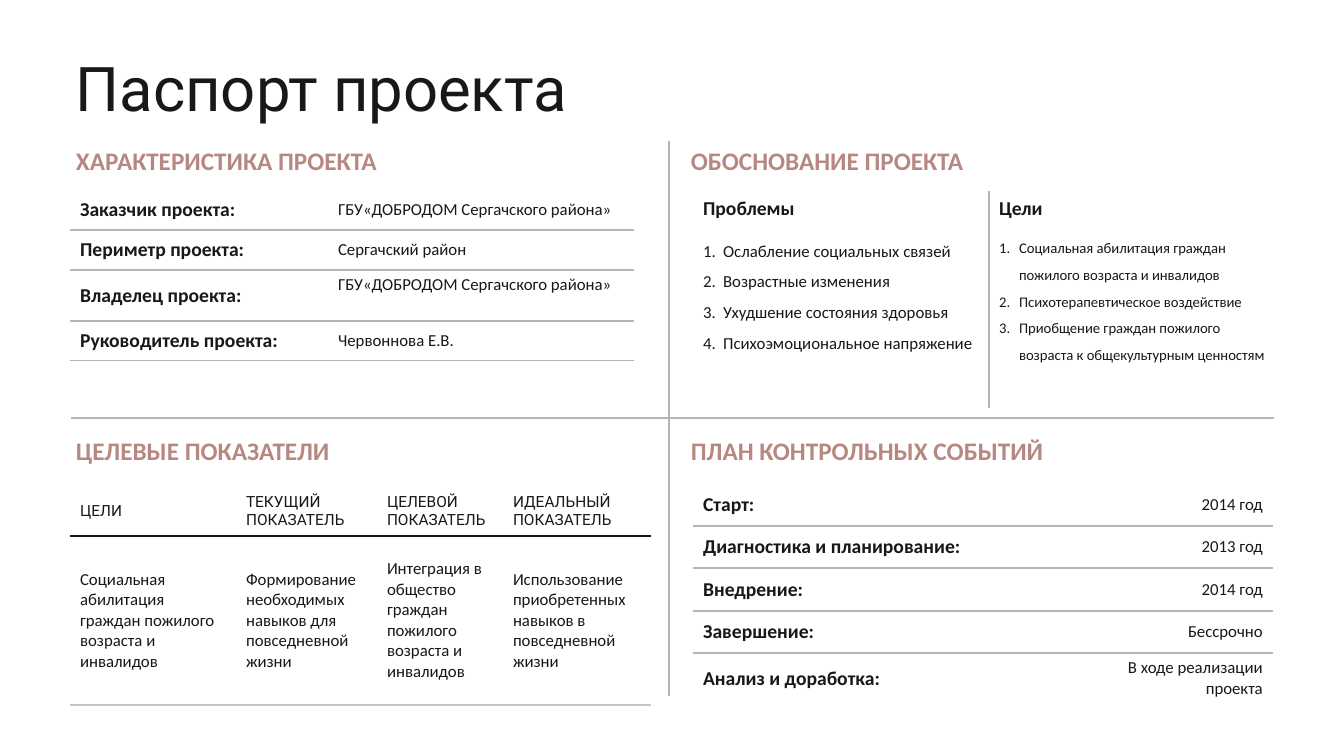
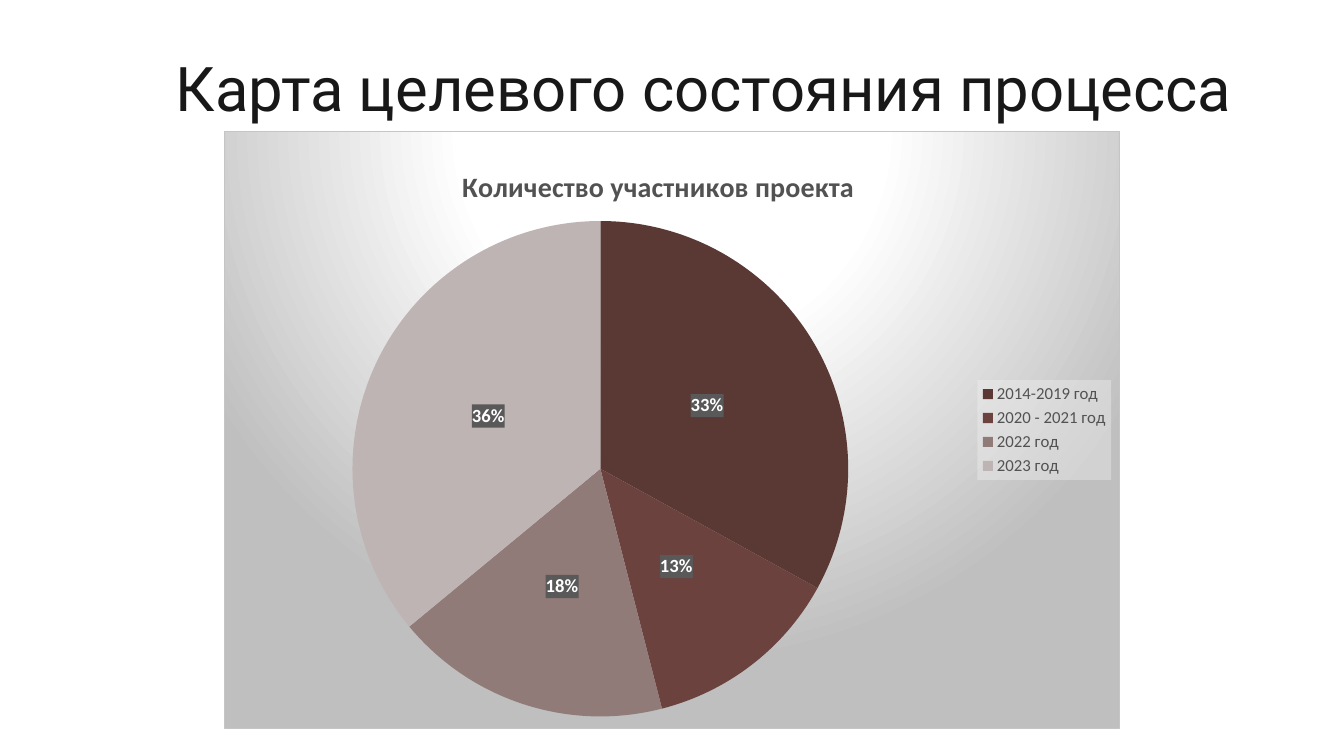
import pptx
import pptx.chart.data
import pptx.dml.color
import pptx.enum.chart
import pptx.enum.shapes
import pptx.enum.text
import pptx.oxml
import pptx.oxml.ns
import pptx.util
from lxml import etree

SCALE = 914400 / 100.8
COLOURS = {
    "ink": "181818", "accent": "B78781", "rule": "B5B5B5", "edge": "C5C5C5",
    "chart_text": "525252", "white": "FFFFFF", "shade": "BFBFBF",
    "label": "595959", "legend": "F2F2F2",
}
STYLES = {
    "title": (44, False, "Roboto", "ink"),
    "heading": (18, True, "Calibri", "accent"),
    "label": (14, True, "Calibri", "ink"),
    "value": (12, False, "Calibri", "ink"),
    "goal": (10.5, False, "Calibri", "ink"),
    "column": (11, False, "Roboto", "ink"),
}
ALIGN = pptx.enum.text.PP_ALIGN
ANCHOR = pptx.enum.text.MSO_ANCHOR
NO_STYLE = "{2D5ABB26-0587-4C30-8999-92F81FD0307C}"
NS = pptx.oxml.ns.nsdecls("a", "c")

PASSPORT_TITLE = "Паспорт проекта"
HEADINGS = [
    ["ХАРАКТЕРИСТИКА ПРОЕКТА", "ОБОСНОВАНИЕ ПРОЕКТА"],
    ["ЦЕЛЕВЫЕ ПОКАЗАТЕЛИ", "ПЛАН КОНТРОЛЬНЫХ СОБЫТИЙ"],
]
HEADING_COLUMNS = [(66, 603), (681, 592)]
HEADING_TOPS = [140, 430]
DIVIDERS = [(669, 141, 669, 696), (71, 418, 1274, 418)]

PROFILE = [
    (40, ["Заказчик проекта:", "ГБУ«ДОБРОДОМ Сергачского района»"]),
    (40, ["Периметр проекта:", "Сергачский район"]),
    (51, ["Владелец проекта:", "ГБУ«ДОБРОДОМ Сергачского района»"]),
    (40, ["Руководитель проекта:", "Червоннова Е.В."]),
]
RATIONALE = [
    (35, ["Проблемы", "Цели"]),
    (182, [
        ["Ослабление социальных связей", "Возрастные изменения",
         "Ухудшение состояния здоровья", "Психоэмоциональное напряжение"],
        ["Социальная абилитация граждан пожилого возраста и инвалидов",
         "Психотерапевтическое воздействие",
         "Приобщение граждан пожилого возраста к общекультурным ценностям"],
    ]),
]
INDICATORS = [
    (49, ["ЦЕЛИ", "ТЕКУЩИЙ ПОКАЗАТЕЛЬ", "ЦЕЛЕВОЙ ПОКАЗАТЕЛЬ", "ИДЕАЛЬНЫЙ ПОКАЗАТЕЛЬ"]),
    (169, ["Социальная абилитация граждан пожилого возраста и инвалидов",
           "Формирование необходимых навыков для повседневной жизни",
           "Интеграция в общество граждан пожилого возраста и инвалидов",
           "Использование приобретенных навыков в повседневной жизни"]),
]
MILESTONES = [
    (43, ["Старт:", "2014 год"]),
    (42, ["Диагностика и планирование:", "2013 год"]),
    (43, ["Внедрение:", "2014 год"]),
    (42, ["Завершение:", "Бессрочно"]),
    (51, ["Анализ и доработка:", "В ходе реализации проекта"]),
]

MAP_TITLE = "Карта целевого состояния процесса"
CHART_TITLE = "Количество участников проекта"
CHART_BOX = (224, 131, 896, 598)
PARTICIPANTS = [
    ("2014-2019 год", 33, "5A3833"),
    ("2020 - 2021 год", 13, "6B423D"),
    ("2022 год", 18, "917B78"),
    ("2023 год", 36, "BEB4B3"),
]


def px(length):
    return pptx.util.Emu(round(length * SCALE))


def rgb(value):
    return pptx.dml.color.RGBColor.from_string(COLOURS.get(value, value))


def style_font(font, size, bold, face, colour):
    font.size = pptx.util.Pt(size)
    font.bold = bold
    font.name = face
    font.color.rgb = rgb(colour)


def write(paragraph, text, style, align=ALIGN.LEFT):
    run = paragraph.add_run()
    run.text = text
    style_font(run.font, *STYLES[style])
    paragraph.alignment = align


def add_text(slide, box, text, style, align=ALIGN.LEFT):
    frame = slide.shapes.add_textbox(*map(px, box)).text_frame
    frame.word_wrap = True
    write(frame.paragraphs[0], text, style, align)
    return frame


def add_title(slide, text, align=ALIGN.LEFT):
    frame = add_text(slide, (66, 52, 1277, 80), text, "title", align)
    frame.vertical_anchor = ANCHOR.MIDDLE
    frame.paragraphs[0].line_spacing = 0.9


def add_divider(slide, ends):
    line = slide.shapes.add_connector(
        pptx.enum.shapes.MSO_CONNECTOR.STRAIGHT, *map(px, ends))
    line.line.color.rgb = rgb("rule")
    line.line.width = pptx.util.Pt(1)
    etree.SubElement(line._element.spPr, pptx.oxml.ns.qn("a:effectLst"))


def add_border(cell, side, colour, points):
    cell._tc.get_or_add_tcPr().append(pptx.oxml.parse_xml(
        f'<a:ln{side} {NS} w="{pptx.util.Pt(points)}"><a:solidFill>'
        f'<a:srgbClr val="{COLOURS[colour]}"/></a:solidFill></a:ln{side}>'))


def number_paragraph(paragraph):
    paragraph.line_spacing = 1.5
    properties = paragraph._p.get_or_add_pPr()
    properties.set("marL", str(px(20)))
    properties.set("indent", str(-px(20)))
    etree.SubElement(properties, pptx.oxml.ns.qn("a:buAutoNum"), type="arabicPeriod")


def add_grid(slide, corner, widths, rows, styles, borders, align=ALIGN.LEFT):
    heights = [height for height, _ in rows]
    table = slide.shapes.add_table(
        len(rows), len(widths), *map(px, (*corner, sum(widths), sum(heights)))).table
    table._tbl.tblPr.find(pptx.oxml.ns.qn("a:tableStyleId")).text = NO_STYLE
    table.first_row = table.horz_banding = False
    for column, width in zip(table.columns, widths):
        column.width = px(width)
    for r, (height, texts) in enumerate(rows):
        table.rows[r].height = px(height)
        for c, text in enumerate(texts):
            cell = table.cell(r, c)
            for border in borders(r, c):
                add_border(cell, *border)
            cell.fill.background()
            numbered = isinstance(text, list)
            cell.vertical_anchor = ANCHOR.TOP if numbered else ANCHOR.MIDDLE
            frame = cell.text_frame
            for i, line in enumerate(text if numbered else [text]):
                paragraph = frame.add_paragraph() if i else frame.paragraphs[0]
                write(paragraph, line, styles(r, c), align if c else ALIGN.LEFT)
                if numbered:
                    number_paragraph(paragraph)
    return table


def row_rules(count):
    def borders(r, c):
        above = [("T", "rule", 1)] if r else []
        below = [("B", "rule", 1)] if r < count else []
        return above + below
    return borders


def label_value(r, c):
    return "value" if c else "label"


def build_passport(slide):
    add_title(slide, PASSPORT_TITLE)
    for ends in DIVIDERS:
        add_divider(slide, ends)
    for top, headings in zip(HEADING_TOPS, HEADINGS):
        for (left, width), heading in zip(HEADING_COLUMNS, headings):
            add_text(slide, (left, top, width, 40), heading, "heading")

    profile = add_grid(slide, (70, 190), [258, 306], PROFILE, label_value, row_rules(4))
    profile.cell(2, 1).vertical_anchor = ANCHOR.TOP
    add_grid(slide, (693, 191), [296, 296], RATIONALE,
             lambda r, c: ("value", "goal")[c] if r else "label",
             lambda r, c: [("L" if c else "R", "rule", 1)])
    add_grid(slide, (70, 487), [166, 141, 126, 148], INDICATORS,
             lambda r, c: "value" if r else "column",
             lambda r, c: [("T", "ink", 1.5), ("B", "edge", 1)] if r else [("B", "ink", 1.5)])
    add_grid(slide, (693, 483), [370, 210], MILESTONES, label_value, row_rules(4), ALIGN.RIGHT)


def place(element, index, **fractions):
    for old in element.findall(pptx.oxml.ns.qn("c:layout")):
        element.remove(old)
    inner = '<c:layoutTarget val="inner"/>' if "w" in fractions else ""
    modes = "".join(f'<c:{k}Mode val="edge"/>' for k in "xy")
    sizes = "".join(f'<c:{k} val="{v}"/>' for k, v in fractions.items())
    element.insert(index, pptx.oxml.parse_xml(
        f"<c:layout {NS}><c:manualLayout>{inner}{modes}{sizes}</c:manualLayout></c:layout>"))


def shape_fill(fill, line=""):
    return pptx.oxml.parse_xml(f"<c:spPr {NS}>{fill}{line}</c:spPr>")


def solid(colour, alpha=100):
    return (f'<a:solidFill><a:srgbClr val="{COLOURS[colour]}">'
            f'<a:alpha val="{alpha * 1000}"/></a:srgbClr></a:solidFill>')


def build_map(slide):
    add_title(slide, MAP_TITLE, ALIGN.CENTER)
    data = pptx.chart.data.CategoryChartData()
    data.categories = [period for period, _, _ in PARTICIPANTS]
    data.add_series("Series 1", [share for _, share, _ in PARTICIPANTS])
    chart = slide.shapes.add_chart(
        pptx.enum.chart.XL_CHART_TYPE.PIE, *map(px, CHART_BOX), data).chart
    style_font(chart.font, 10, False, "Calibri", "ink")

    chart.has_title = True
    heading = chart.chart_title.text_frame.paragraphs[0].add_run()
    heading.text = CHART_TITLE
    style_font(heading.font, 20, True, "Calibri", "chart_text")

    chart.has_legend = True
    legend = chart.legend
    legend.position = pptx.enum.chart.XL_LEGEND_POSITION.RIGHT
    legend.include_in_layout = False
    style_font(legend.font, 12, False, "Calibri", "chart_text")

    plot = chart.plots[0]
    plot.vary_by_categories = True
    for i, (_, _, colour) in enumerate(PARTICIPANTS):
        slice_fill = plot.series[0].points[i].format.fill
        slice_fill.solid()
        slice_fill.fore_color.rgb = rgb(colour)
    labels = plot.series[0].data_labels
    labels.show_percentage = True
    labels.show_value = False
    labels.number_format = "0%"
    labels.number_format_is_linked = False
    labels.position = pptx.enum.chart.XL_LABEL_POSITION.CENTER
    style_font(labels.font, 13.3, True, "Calibri", "white")

    text_properties = pptx.oxml.ns.qn("c:txPr")
    labels._element.find(text_properties).addprevious(shape_fill(solid("label")))
    legend._element.find(text_properties).addprevious(shape_fill(solid("legend", 39)))
    stops = "".join(
        f'<a:gs pos="{at * 1000}"><a:srgbClr val="{COLOURS[colour]}"/></a:gs>'
        for at, colour in [(0, "white"), (39, "white"), (100, "shade")])
    backdrop = (f'<a:gradFill><a:gsLst>{stops}</a:gsLst><a:path path="circle">'
                '<a:fillToRect l="50000" t="-80000" r="50000" b="180000"/></a:path></a:gradFill>')
    outline = f'<a:ln w="{pptx.util.Pt(0.75)}">{solid("edge")}</a:ln>'
    chart_part = chart._chartSpace.find(pptx.oxml.ns.qn("c:chart"))
    chart_part.addnext(shape_fill(backdrop, outline))
    place(chart.chart_title._element, 1, x=0.26, y=0.05)
    place(chart_part.find(pptx.oxml.ns.qn("c:plotArea")), 0, x=0.14, y=0.15, w=0.56, h=0.83)


def main():
    deck = pptx.Presentation()
    deck.slide_width, deck.slide_height = px(1344), px(756)
    for build in (build_passport, build_map):
        build(deck.slides.add_slide(deck.slide_layouts[6]))
    deck.save("out.pptx")


if __name__ == "__main__":
    main()
